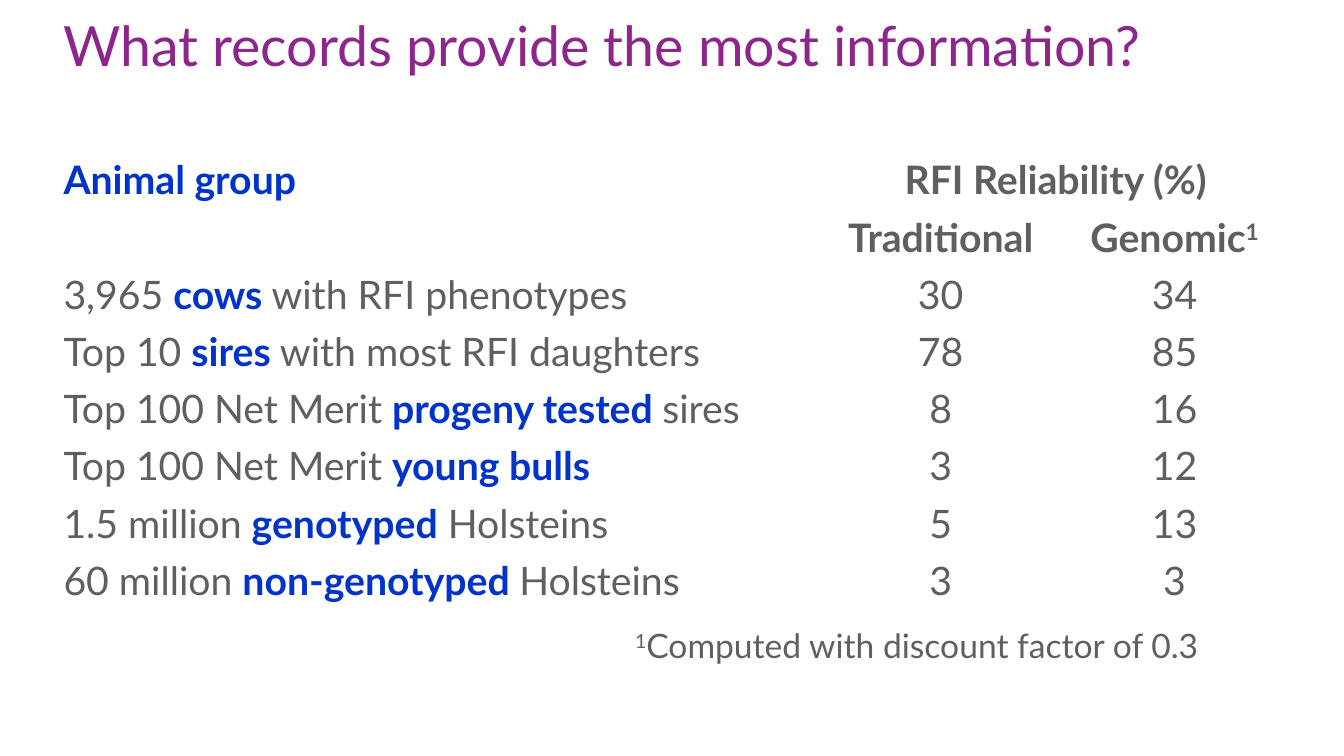
from dataclasses import dataclass

from pptx import Presentation
from pptx.dml.color import RGBColor
from pptx.enum.text import MSO_ANCHOR, MSO_AUTO_SIZE, PP_ALIGN
from pptx.util import Inches, Pt


@dataclass(frozen=True)
class Theme:
    """Colours, font and type sizes of the slide."""
    font: str = "Lato"
    title: RGBColor = RGBColor(0x8E, 0x25, 0x8D)
    body: RGBColor = RGBColor(0x5F, 0x5F, 0x5F)
    accent: RGBColor = RGBColor(0x00, 0x33, 0xCC)
    title_size: float = 39.6
    table_size: float = 28
    note_size: float = 24


THEME = Theme()
COLUMN_WIDTHS = (7.62, 2.36, 2.28)
RELIABILITIES = (
    ("3,965 ", "cows", " with RFI phenotypes", 30, 34),
    ("Top 10 ", "sires", " with most RFI daughters", 78, 85),
    ("Top 100 Net Merit ", "progeny tested ", "sires", 8, 16),
    ("Top 100 Net Merit ", "young bulls", "", 3, 12),
    ("1.5 million ", "genotyped", " Holsteins", 5, 13),
    ("60 million ", "non-genotyped ", "Holsteins", 3, 3),
)


def style_paragraph(paragraph, size, color, bold=False):
    """Set the font shared by all runs of a paragraph."""
    font = paragraph.font
    font.name, font.size, font.bold = THEME.font, Pt(size), bold
    font.color.rgb = color


def add_run(paragraph, text, superscript=False):
    """Append a run, raised when it is a superscript."""
    run = paragraph.add_run()
    run.text = text
    if superscript:
        run.font._element.set("baseline", "30000")
    return run


def add_text_box(slide, left, top, width, height, wrap=True):
    """Add a text box and return its text frame."""
    box = slide.shapes.add_textbox(Inches(left), Inches(top), Inches(width), Inches(height))
    box.text_frame.word_wrap = wrap
    return box.text_frame


def add_title(slide, left, top, width, height):
    """Write the slide title."""
    frame = add_text_box(slide, left, top, width, height)
    frame.vertical_anchor = MSO_ANCHOR.MIDDLE
    paragraph = frame.paragraphs[0]
    paragraph.line_spacing = 0.9
    style_paragraph(paragraph, THEME.title_size, THEME.title)
    add_run(paragraph, "What records provide the most information?")


def write_cell(cell, text, color=THEME.body, bold=False, centered=True):
    """Write one table cell and return its paragraph."""
    paragraph = cell.text_frame.paragraphs[0]
    paragraph.alignment = PP_ALIGN.CENTER if centered else PP_ALIGN.LEFT
    style_paragraph(paragraph, THEME.table_size, color, bold)
    add_run(paragraph, text)
    return paragraph


def add_reliability_table(slide, left, top, width, height):
    """Build the table of reliabilities by animal group."""
    row_count = len(RELIABILITIES) + 2
    table = slide.shapes.add_table(
        row_count, len(COLUMN_WIDTHS),
        Inches(left), Inches(top), Inches(width), Inches(height)).table
    table.first_row = table.horz_banding = False
    for column, column_width in zip(table.columns, COLUMN_WIDTHS):
        column.width = Inches(column_width)
    for cell in table.iter_cells():
        cell.fill.background()

    table.cell(0, 1).merge(table.cell(0, 2))
    write_cell(table.cell(0, 0), "Animal group", THEME.accent, True, centered=False)
    write_cell(table.cell(0, 1), "RFI Reliability (%)", bold=True)
    write_cell(table.cell(1, 1), "Traditional", bold=True)
    genomic = write_cell(table.cell(1, 2), "Genomic", bold=True)
    add_run(genomic, "1", superscript=True)

    for row, (before, group, after, *values) in enumerate(RELIABILITIES, start=2):
        paragraph = write_cell(table.cell(row, 0), before, centered=False)
        emphasis = add_run(paragraph, group).font
        emphasis.bold = True
        emphasis.color.rgb = THEME.accent
        if after:
            add_run(paragraph, after)
        for column, value in enumerate(values, start=1):
            write_cell(table.cell(row, column), str(value))


def add_footnote(slide, left, top, width, height):
    """Write the note on the genomic column."""
    frame = add_text_box(slide, left, top, width, height, wrap=False)
    frame.auto_size = MSO_AUTO_SIZE.SHAPE_TO_FIT_TEXT
    paragraph = frame.paragraphs[0]
    style_paragraph(paragraph, THEME.note_size, THEME.body)
    add_run(paragraph, "1", superscript=True)
    add_run(paragraph, "Computed with discount factor of 0.3")


def main():
    """Build and save the presentation."""
    presentation = Presentation()
    presentation.slide_width, presentation.slide_height = Inches(13.33), Inches(7.5)
    slide = presentation.slides.add_slide(presentation.slide_layouts[6])
    add_title(slide, 0.53, 0.13, 12.27, 0.7)
    add_reliability_table(slide, 0.53, 1.5, sum(COLUMN_WIDTHS), 4.53)
    add_footnote(slide, 6.2, 6.15, 5.86, 0.5)
    presentation.save("out.pptx")


if __name__ == "__main__":
    main()
